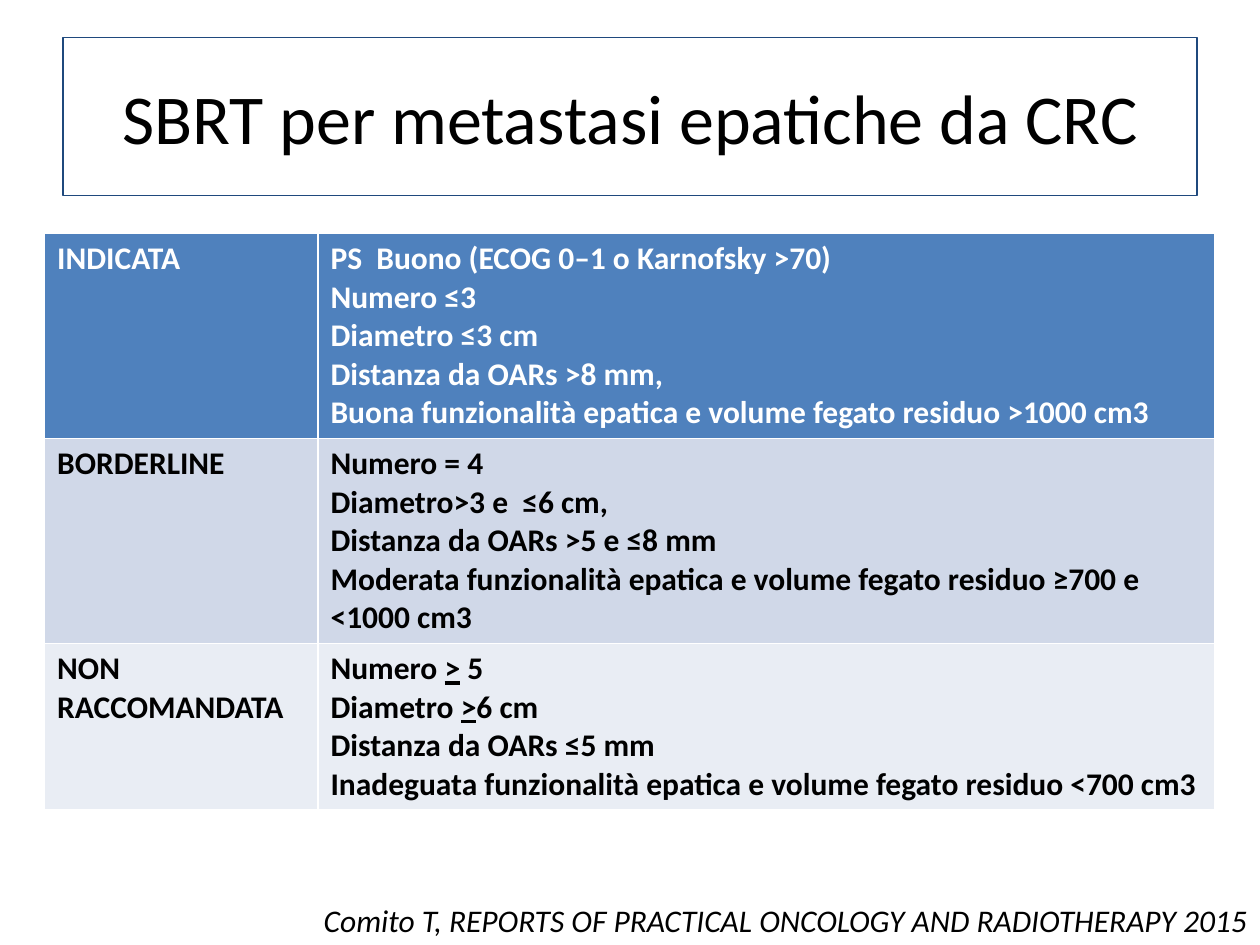
import pptx
import pptx.dml.color
import pptx.enum.text
import pptx.util
from pptx.util import Cm

FONT = {"name": "Calibri"}
ALIGN = pptx.enum.text.PP_ALIGN
ANCHOR = pptx.enum.text.MSO_ANCHOR


def color(hex_value):
    return pptx.dml.color.RGBColor.from_string(hex_value)


def add_run(paragraph, text, size, hex_value, **formats):
    run = paragraph.add_run()
    run.text = text
    run.font.color.rgb = color(hex_value)
    for name, value in {**FONT, "size": pptx.util.Pt(size), **formats}.items():
        setattr(run.font, name, value)


presentation = pptx.Presentation()
presentation.slide_width, presentation.slide_height = Cm(25.4), Cm(19.05)
slide = presentation.slides.add_slide(presentation.slide_layouts[5])

# Title
title = slide.shapes.title
title_box = {"left": Cm(1.27), "top": Cm(0.76), "width": Cm(22.86), "height": Cm(3.18)}
for name, value in title_box.items():
    setattr(title, name, value)
title.line.color.rgb = color("1F497D")
title.line.width = pptx.util.Pt(0.75)
title.text_frame.vertical_anchor = ANCHOR.MIDDLE
paragraph = title.text_frame.paragraphs[0]
paragraph.alignment = ALIGN.CENTER
add_run(paragraph, "SBRT per metastasi epatiche da CRC", 40, "000000")

# Criteria table: category, criteria, fill, text colour, row height.
# Text between underscores is underlined.
rows = [
    ("INDICATA",
     ["PS  Buono (ECOG 0–1 o Karnofsky >70)",
      "Numero ≤3",
      "Diametro ≤3 cm",
      "Distanza da OARs >8 mm,",
      "Buona funzionalità epatica e volume fegato residuo >1000 cm3"],
     "4F81BD", "FFFFFF", 4.13),
    ("BORDERLINE",
     ["Numero = 4",
      "Diametro>3 e  ≤6 cm,",
      "Distanza da OARs >5 e ≤8 mm",
      "Moderata funzionalità epatica e volume fegato residuo ≥700 e <1000 cm3"],
     "D0D8E8", "000000", 4.13),
    ("NON RACCOMANDATA",
     ["Numero _>_ 5",
      "Diametro _>_6 cm",
      "Distanza da OARs ≤5 mm",
      "Inadeguata funzionalità epatica e volume fegato residuo <700 cm3"],
     "E9EDF4", "000000", 3.35),
]
column_widths = [5.51, 18.08]
table = slide.shapes.add_table(
    len(rows), len(column_widths), Cm(0.9), Cm(4.71),
    Cm(sum(column_widths)), Cm(sum(row[-1] for row in rows))).table
for column, width in zip(table.columns, column_widths):
    column.width = Cm(width)

for row, (category, criteria, fill, text_color, height) in zip(table.rows, rows):
    row.height = Cm(height)
    for cell, lines in zip(row.cells, ([category], criteria)):
        cell.fill.solid()
        cell.fill.fore_color.rgb = color(fill)
        for index, line in enumerate(lines):
            frame = cell.text_frame
            paragraph = frame.add_paragraph() if index else frame.paragraphs[0]
            for part, text in enumerate(line.split("_")):
                add_run(paragraph, text, 18, text_color, bold=True,
                        underline=part % 2 == 1)

# Citation
citation = slide.shapes.add_textbox(Cm(6.02), Cm(18.03), Cm(19.38), Cm(1.02))
citation.text_frame.word_wrap = False
citation.text_frame.auto_size = pptx.enum.text.MSO_AUTO_SIZE.SHAPE_TO_FIT_TEXT
paragraph = citation.text_frame.paragraphs[0]
paragraph.alignment = ALIGN.RIGHT
add_run(paragraph, "Comito T, REPORTS OF PRACTICAL ONCOLOGY AND RADIOTHERAPY 2015",
        18, "000000", italic=True)

presentation.save("out.pptx")
